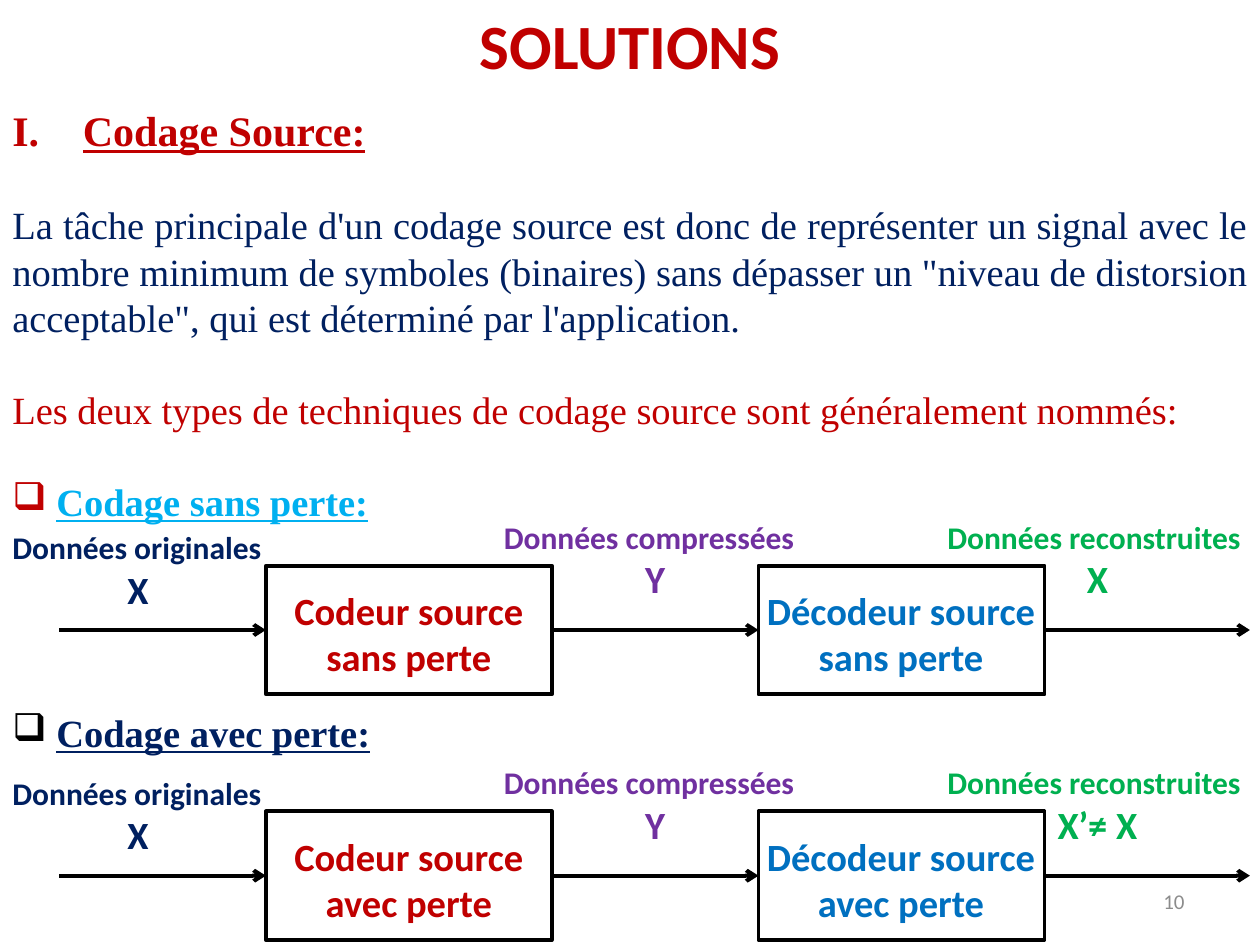
from lxml import etree
from pptx import Presentation
from pptx.dml.color import RGBColor
from pptx.enum import shapes, text
from pptx.oxml import ns
from pptx.util import Inches, Pt

theme = {
    "sans": "Calibri", "serif": "Times New Roman",
    "red": "C00000", "navy": "002060", "sky": "00B0F0", "blue": "0070C0",
    "purple": "7030A0", "green": "00B050", "black": "000000", "grey": "8C8C8C",
    "title": 36, "heading": 24, "body": 22, "label": 18, "number": 12,
    "line": 2.25, "pitch": 26.4, "first": 29,
}
LEFT, CENTER, RIGHT, JUSTIFY = (
    text.PP_ALIGN.LEFT, text.PP_ALIGN.CENTER, text.PP_ALIGN.RIGHT, text.PP_ALIGN.JUSTIFY)

prs = Presentation()
prs.slide_width, prs.slide_height = Inches(10), Inches(7.5)
col, row = prs.slide_width / 100, prs.slide_height / 75
s = prs.slides.add_slide(prs.slide_layouts[6])


def grid(x, y, w, h):
    return round(x * col), round(y * row), round(w * col), round(h * row)


def write(box, paras, face="sans", anchor=text.MSO_ANCHOR.TOP):
    tf = s.shapes.add_textbox(*grid(*box)).text_frame
    tf.word_wrap, tf.vertical_anchor = True, anchor
    for i, (words, size, color, bold, align) in enumerate(paras):
        p = tf.add_paragraph() if i else tf.paragraphs[0]
        p.alignment = align
        r = p.add_run()
        r.text = words
        fmt = {"name": theme[face], "size": Pt(theme[size]), "bold": bold}
        for key, value in fmt.items():
            setattr(r.font, key, value)
        r.font.color.rgb = RGBColor.from_string(theme[color])
    return tf


write((71.7, 69.5, 23.3, 4), [("10", "number", "grey", False, RIGHT)],
      anchor=text.MSO_ANCHOR.MIDDLE)
write((0, 0, 100, 7.1), [("SOLUTIONS", "title", "red", True, CENTER)])

tf = write((0, 7.8, 100, 66.6), [
    ("Codage Source:", "heading", "red", True, LEFT),
    ("La tâche principale d'un codage source est donc de représenter un signal "
     "avec le nombre minimum de symboles (binaires) sans dépasser un \"niveau de "
     "distorsion acceptable\", qui est déterminé par l'application.",
     "body", "navy", False, JUSTIFY),
    ("Les deux types de techniques de codage source sont généralement nommés:",
     "body", "red", False, JUSTIFY),
    ("Codage sans perte:", "body", "sky", True, JUSTIFY),
    ("Codage avec perte:", "body", "navy", True, JUSTIFY),
], "serif")
for p, gap in zip(tf.paragraphs, (0, 1, 1, 1, 4)):
    p.line_spacing = Pt(theme["pitch"] if gap else theme["first"])
    p.space_before = Pt(theme["pitch"] * gap)

bullets = [
    (0, 5.6, "red", "a:buAutoNum", {"type": "romanUcPeriod"}),
    (3, 3.5, "red", "a:buChar", {"char": "❑"}),
    (4, 3.5, "black", "a:buChar", {"char": "❑"}),
]
for i, indent, color, tag, attrs in bullets:
    p = tf.paragraphs[i]
    p.runs[0].font.underline = True
    pPr = p._p.get_or_add_pPr()
    pPr.set("marL", str(round(indent * col)))
    pPr.set("indent", str(-round(indent * col)))
    clr = etree.SubElement(pPr, ns.qn("a:buClr"))
    etree.SubElement(clr, ns.qn("a:srgbClr"), val=theme[color])
    etree.SubElement(pPr, ns.qn(tag), **attrs)

for top, kind, result in ((44.9, "sans", "X"), (64.4, "avec", "X’≠ X")):
    boxes = []
    for x in (21.1, 60.2):
        sp = s.shapes.add_shape(shapes.MSO_SHAPE.RECTANGLE, *grid(x, top, 22.7, 10.2))
        sp.shadow.inherit = False
        sp.fill.background()
        sp.line.color.rgb = RGBColor.from_string(theme["black"])
        sp.line.width = Pt(theme["line"])
        boxes.append(sp)

    coder, decoder = boxes
    for x1, x2, start, end in (
        (4.7, 21.1, None, coder), (43.8, 60.2, coder, decoder), (82.9, 99.2, decoder, None)
    ):
        x, y, w, _ = grid(x1, top + 5.1, x2 - x1, 0)
        cn = s.shapes.add_connector(shapes.MSO_CONNECTOR.STRAIGHT, x, y, x + w, y)
        if start:
            cn.begin_connect(start, 3)
        if end:
            cn.end_connect(end, 1)
        cn.line.color.rgb = RGBColor.from_string(theme["black"])
        cn.line.width = Pt(theme["line"])
        spPr = cn._element.spPr
        etree.SubElement(spPr.find(ns.qn("a:ln")), ns.qn("a:tailEnd"), type="arrow")
        etree.SubElement(spPr, ns.qn("a:effectLst"))

    for x, w, name, color in ((21.1, 22.7, "Codeur", "red"), (59.4, 24.2, "Décodeur", "blue")):
        write((x, top + 1.2, w, 8.4),
              [(f"{name} source {kind} perte", "body", color, True, CENTER)])

    for x, dy, w, name, symbol, color in (
        (0, -3.5, 21.9, "originales", "X", "navy"),
        (39, -4.3, 26, "compressées", "Y", "purple"),
        (74.2, -4.3, 25.8, "reconstruites", result, "green"),
    ):
        write((x, top + dy, w, 7.7), [
            (f"Données {name}", "label", color, True, LEFT),
            (symbol, "body", color, True, CENTER),
        ])

prs.save("out.pptx")
